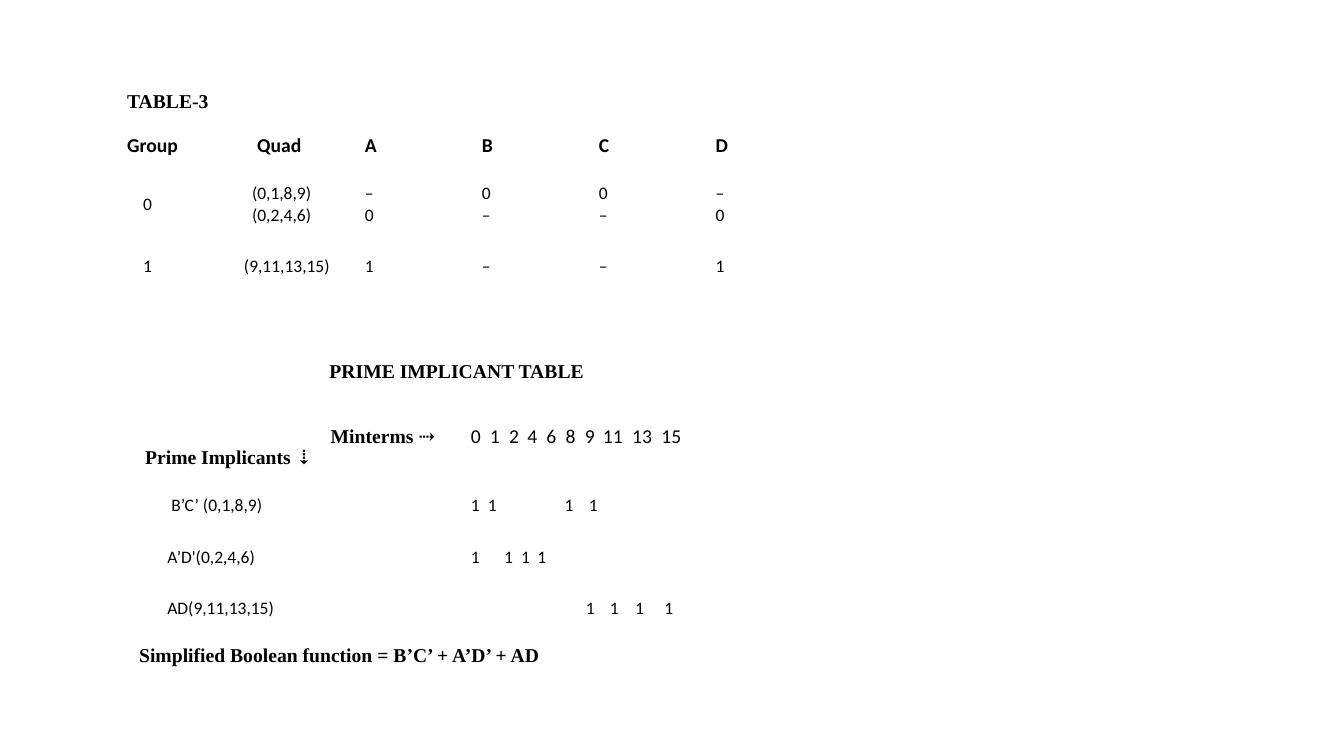
from itertools import product
from lxml import etree
from pptx import Presentation
from pptx.dml.color import RGBColor
from pptx.enum.text import MSO_ANCHOR as Anchor, PP_ALIGN as Align
from pptx.oxml.ns import qn
from pptx.util import Inches, Pt

# Content: each cell is (lines, indent in inches)
QUAD_TITLE = "TABLE-3"
QUAD_HEADER = [("Group", 0), ("Quad", 0.13), ("A", 0.04), ("B", 0.04),
               ("C", 0.04), ("D", 0.04)]
QUAD_ROWS = [
    [(["0"], 0.16), (["(0,1,8,9)", "(0,2,4,6)"], 0.08), (["–", "0"], 0.04),
     (["0", "–"], 0.04), (["0", "–"], 0.04), (["–", "0"], 0.04)],
    [(["1"], 0.16), (["(9,11,13,15)"], 0), (["1"], 0.04),
     (["–"], 0.04), (["–"], 0.04), (["1"], 0.04)],
]
PRIME_TITLE = "PRIME IMPLICANT TABLE"
PRIME_HEADER = ["Minterms ⇢", "Prime Implicants ⇣"]
MINTERMS = ["0", "1", "2", "4", "6", "8", "9", "11", "13", "15"]
MINTERM_STOPS = [0.04, 0.23, 0.42, 0.6, 0.79, 0.98, 1.17, 1.35, 1.64, 1.93]
# Prime implicant, its indent, where its marks stand
IMPLICANTS = [
    ("B’C’ (0,1,8,9)", 0.32, [0.04, 0.21, 0.97, 1.21]),
    ("A’D'(0,2,4,6)", 0.28, [0.04, 0.37, 0.54, 0.7]),
    ("AD(9,11,13,15)", 0.28, [1.18, 1.42, 1.67, 1.96]),
]
RESULT = "Simplified Boolean function = B’C’ + A’D’ + AD"

# Style
SERIF, SANS = "Times New Roman", "Calibri"
HEAD_SIZE, BODY_SIZE = 14, 12.5
HEAD_PAD, BODY_PAD, SIDE_PAD = 0.1, 0.15, 0.1
HEAD_ROW, BODY_ROW, PAIR_ROW, CORNER_ROW = 0.43, 0.51, 0.72, 0.86
LINE_HEIGHT = 0.22


def color(code):
    return RGBColor.from_string(code)


def add_grid(page, left, top, column_width, columns, heights):
    frame = page.shapes.add_table(len(heights), columns, Inches(left), Inches(top),
                                  Inches(column_width * columns), Inches(sum(heights)))
    table = frame.table
    table.first_row = table.horz_banding = False
    for column in table.columns:
        column.width = Inches(column_width)
    for row, height in zip(table.rows, heights):
        row.height = Inches(height)
    for row, column in product(range(len(heights)), range(columns)):
        cell = table.cell(row, column)
        cell.fill.solid()
        cell.fill.fore_color.rgb = color("FFFFFF")
    return table


def write(cell, lines, indent=0, head=False, font=SANS, bold=False, align=Align.LEFT):
    cell.vertical_anchor = Anchor.MIDDLE
    cell.margin_left = Inches(SIDE_PAD + indent)
    cell.margin_right = Inches(SIDE_PAD)
    cell.margin_top = cell.margin_bottom = Inches(HEAD_PAD if head else BODY_PAD)
    cell.text_frame.text = "\n".join(lines)
    for para in cell.text_frame.paragraphs:
        para.alignment = align
        para.font.name = font
        para.font.size = Pt(HEAD_SIZE if head else BODY_SIZE)
        para.font.bold = bold
        para.font.color.rgb = color("000000")


def write_at_stops(cell, words, stops, head=False):
    """The first word sets the indent, the others stand at tab stops."""
    write(cell, ["\t".join(words)], stops[0], head)
    props = cell.text_frame.paragraphs[0]._p.get_or_add_pPr()
    tabs = etree.Element(qn("a:tabLst"))
    for stop in stops[1:]:
        etree.SubElement(tabs, qn("a:tab"), pos=str(Inches(stop - stops[0])), algn="l")
    props.insert(0, tabs)


def write_across(table, row, text, align=Align.LEFT):
    first = table.cell(row, 0)
    first.merge(table.cell(row, len(table.columns) - 1))
    write(first, [text], head=True, font=SERIF, bold=True, align=align)


def add_quad_table(page):
    table = add_grid(page, 1.16, 0.8, 1.16, len(QUAD_HEADER),
                     [HEAD_ROW, HEAD_ROW, PAIR_ROW, BODY_ROW])
    write_across(table, 0, QUAD_TITLE)
    for column, (label, indent) in enumerate(QUAD_HEADER):
        write(table.cell(1, column), [label], indent, head=True, bold=True)
    for row, cells in enumerate(QUAD_ROWS, 2):
        for column, (lines, indent) in enumerate(cells):
            write(table.cell(row, column), lines, indent)


def add_prime_table(page):
    table = add_grid(page, 1.28, 3.47, 3.25, 2,
                     [HEAD_ROW, CORNER_ROW] + [BODY_ROW] * len(IMPLICANTS) + [HEAD_ROW])
    write_across(table, 0, PRIME_TITLE, Align.CENTER)
    # Corner cell: minterms to the right, implicants below
    corner = table.cell(1, 0)
    write(corner, PRIME_HEADER, 0.06, head=True, font=SERIF, bold=True)
    corner.margin_top = Inches(HEAD_PAD + LINE_HEIGHT)
    corner.text_frame.paragraphs[0]._p.get_or_add_pPr().set("marL", str(Inches(1.84)))
    write_at_stops(table.cell(1, 1), MINTERMS, MINTERM_STOPS, head=True)
    for row, (name, indent, stops) in enumerate(IMPLICANTS, 2):
        write(table.cell(row, 0), [name], indent)
        write_at_stops(table.cell(row, 1), ["1"] * len(stops), stops)
    write_across(table, len(table.rows) - 1, RESULT)


def main():
    deck = Presentation()
    deck.slide_width, deck.slide_height = Inches(13.33), Inches(7.5)
    page = deck.slides.add_slide(deck.slide_layouts[6])
    add_quad_table(page)
    add_prime_table(page)
    deck.save("out.pptx")


if __name__ == "__main__":
    main()
